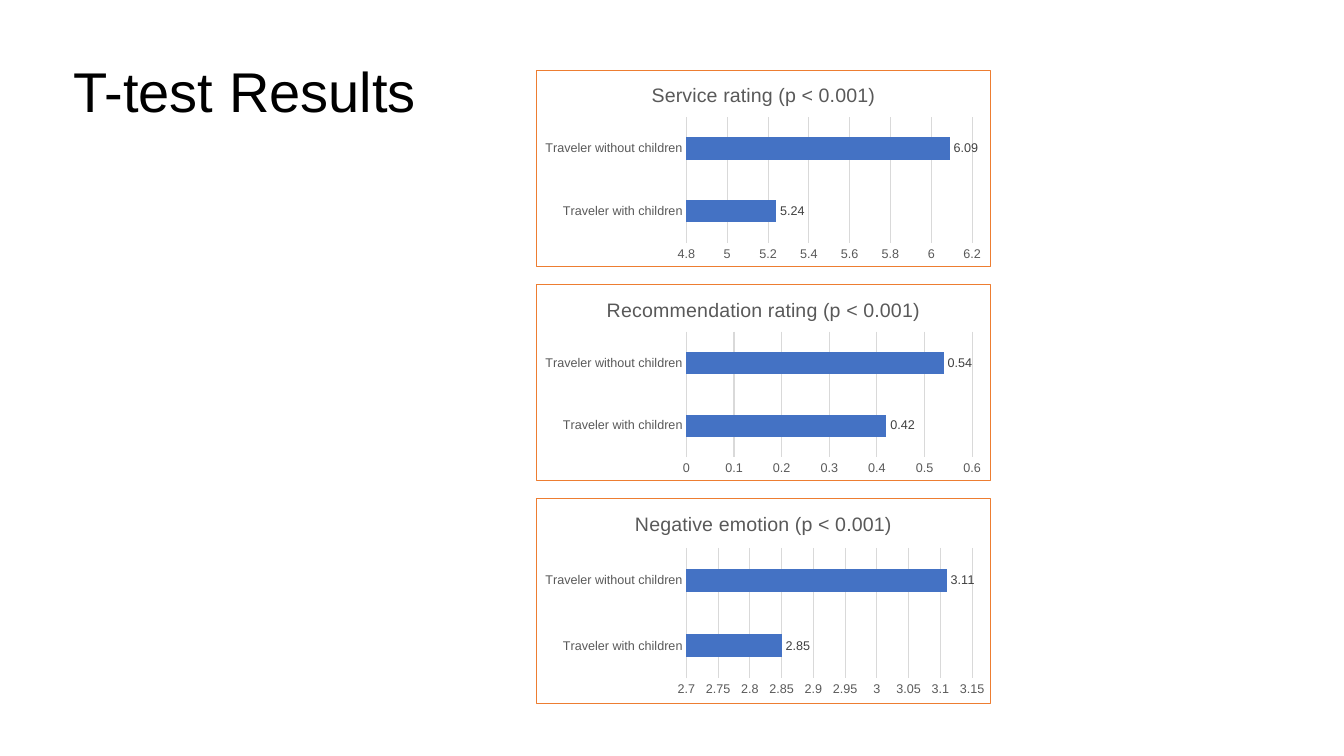
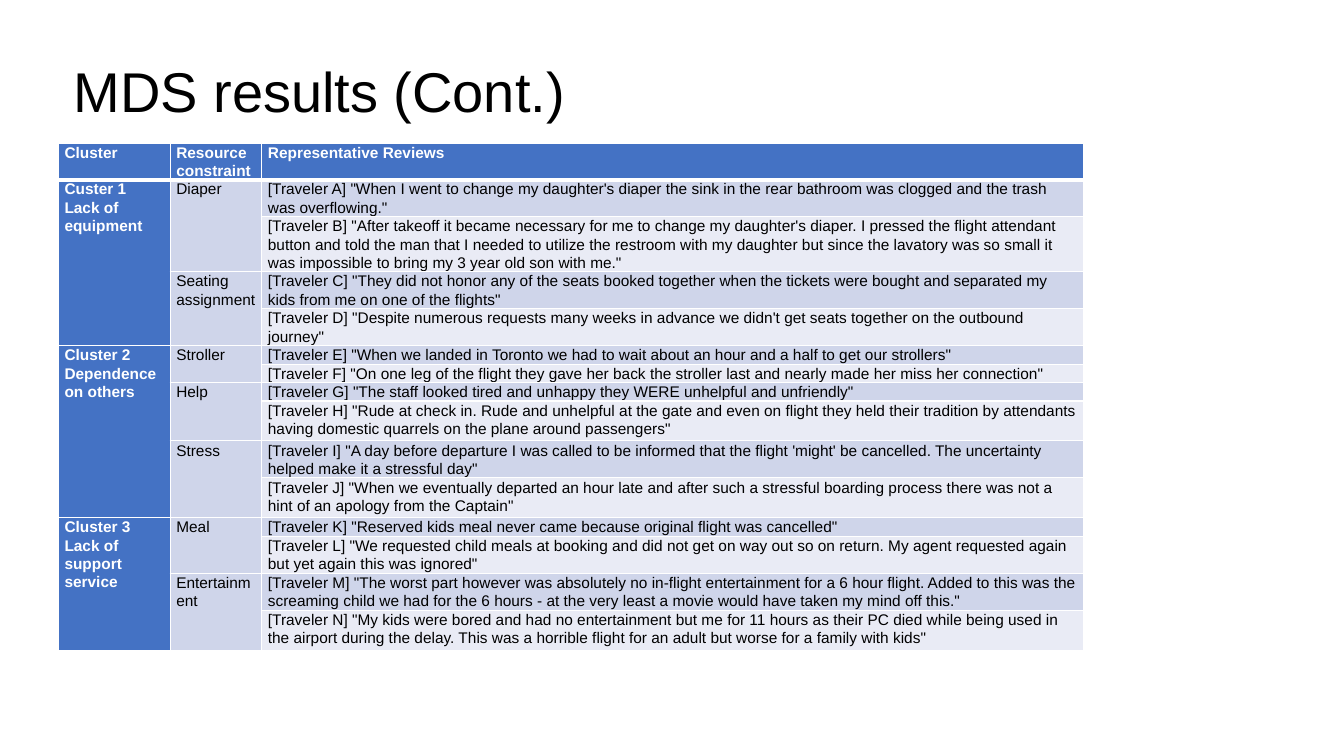
from itertools import accumulate

from lxml.etree import SubElement
from pptx import Presentation
from pptx.chart.data import CategoryChartData
from pptx.dml.color import RGBColor
from pptx.enum.chart import XL_CHART_TYPE as ChartType
from pptx.enum.chart import XL_LABEL_POSITION as LabelPosition
from pptx.enum.chart import XL_TICK_MARK as TickMark
from pptx.enum.text import MSO_ANCHOR as Anchor
from pptx.enum.text import MSO_AUTO_SIZE as AutoSize
from pptx.enum.text import PP_ALIGN as Align
from pptx.oxml import parse_xml
from pptx.oxml.ns import nsdecls, qn
from pptx.util import Emu, Inches, Pt

SLIDE_W, SLIDE_H = Inches(13.33), Inches(7.5)
FONT = "Arial"
BLACK, WHITE = "000000", "FFFFFF"
BLUE, ORANGE = "4472C4", "ED7D31"
BAND_DARK, BAND_LIGHT = "CFD5EA", "E9EBF5"
GRID_GREY, AXIS_GREY, LABEL_GREY = "D9D9D9", "595959", "404040"

# Boxes are left, top, width, height in percent of the slide.
TITLE_BOX = (4.73, 7.87, 75.38, 13.33)
CHART_COLUMN = (39.9, 9.2, 33.83, 83.87)
TABLE_BOX = (4.35, 18.93, 76.28, 66.8)

TRAVELERS = ("Traveler with children", "Traveler without children")
# Title, values, axis minimum, axis maximum, axis step, height weight
T_TESTS = [
    ("Service rating (p < 0.001)", (5.24, 6.09), 4.8, 6.2, 0.2, 1),
    ("Recommendation rating (p < 0.001)", (0.42, 0.54), 0, 0.6, 0.1, 1),
    ("Negative emotion (p < 0.001)", (2.85, 3.11), 2.7, 3.15, 0.05, 1.04),
]
CHART_GAP = 2.7 / 100
PLOT_LAYOUT = {"x": 0.33, "y": 0.24, "w": 0.63, "h": 0.64}

HEADINGS = ("Cluster", "Resource constraint", "Representative Reviews")
CLUSTERS = [
    ("Custer 1\nLack of equipment", [
        ("Diaper", [
            "[Traveler A] \"When I went to change my daughter's diaper the sink in the rear "
            "bathroom was clogged and the trash was overflowing.\"",
            "[Traveler B] \"After takeoff it became necessary for me to change my daughter's "
            "diaper. I pressed the flight attendant button and told the man that I needed to "
            "utilize the restroom with my daughter but since the lavatory was so small it was "
            "impossible to bring my 3 year old son with me.\"",
        ]),
        ("Seating assignment", [
            "[Traveler C] \"They did not honor any of the seats booked together when the "
            "tickets were bought and separated my kids from me on one of the flights\"",
            "[Traveler D] \"Despite numerous requests many weeks in advance we didn't get "
            "seats together on the outbound journey\"",
        ]),
    ]),
    ("Cluster 2\nDependence on others", [
        ("Stroller", [
            "[Traveler E] \"When we landed in Toronto we had to wait about an hour and a half "
            "to get our strollers\"",
            "[Traveler F] \"On one leg of the flight they gave her back the stroller last and "
            "nearly made her miss her connection\"",
        ]),
        ("Help", [
            "[Traveler G] \"The staff looked tired and unhappy they WERE unhelpful and "
            "unfriendly\"",
            "[Traveler H] \"Rude at check in. Rude and unhelpful at the gate and even on "
            "flight they held their tradition by attendants having domestic quarrels on the "
            "plane around passengers\"",
        ]),
        ("Stress", [
            "[Traveler I] \"A day before departure I was called to be informed that the "
            "flight 'might' be cancelled. The uncertainty helped make it a stressful day\"",
            "[Traveler J] \"When we eventually departed an hour late and after such a "
            "stressful boarding process there was not a hint of an apology from the Captain\"",
        ]),
    ]),
    ("Cluster 3\nLack of support service", [
        ("Meal", [
            "[Traveler K] \"Reserved kids meal never came because original flight was "
            "cancelled\"",
            "[Traveler L] \"We requested child meals at booking and did not get on way out so "
            "on return. My agent requested again but yet again this was ignored\"",
        ]),
        ("Entertainment", [
            "[Traveler M] \"The worst part however was absolutely no in-flight entertainment "
            "for a 6 hour flight. Added to this was the screaming child we had for the 6 hours "
            "- at the very least a movie would have taken my mind off this.\"",
            "[Traveler N] \"My kids were bored and had no entertainment but me for 11 hours as "
            "their PC died while being used in the airport during the delay. This was a "
            "horrible flight for an adult but worse for a family with kids\"",
        ]),
    ]),
]
COLUMN_WEIGHTS = (1.11, 0.91, 8.16)
ROW_WEIGHTS = (0.36, 0.37, 0.55, 0.37, 0.37, 0.18, 0.18, 0.18, 0.4,
               0.37, 0.4, 0.18, 0.37, 0.37, 0.4)


def rgb(hex_color):
    return RGBColor.from_string(hex_color)


def to_emu(box):
    left, top, width, height = box
    return [Emu(int(share * side / 100)) for share, side in
            ((left, SLIDE_W), (top, SLIDE_H), (width, SLIDE_W), (height, SLIDE_H))]


def split(length, weights):
    """Divide a length in proportion to the weights."""
    return [Emu(int(length * weight / sum(weights))) for weight in weights]


def style_font(font, size, color, bold=False):
    font.name, font.size, font.bold = FONT, Pt(size), bold
    font.color.rgb = rgb(color)


def add_titled_slide(prs, title_text):
    slide = prs.slides.add_slide(prs.slide_layouts[5])
    title = slide.shapes.title
    title.left, title.top, title.width, title.height = to_emu(TITLE_BOX)
    frame = title.text_frame
    frame.text = title_text
    frame.word_wrap = True
    frame.auto_size = AutoSize.NONE
    frame.vertical_anchor = Anchor.TOP
    paragraph = frame.paragraphs[0]
    paragraph.alignment, paragraph.line_spacing = Align.LEFT, 0.9
    style_font(paragraph.runs[0].font, 40, BLACK)
    return slide


def frame_chart(chart):
    """Give the chart area a white fill and a thin orange outline."""
    chart.element.find(qn("c:chart")).addnext(parse_xml(
        f'<c:spPr {nsdecls("c", "a")}>'
        f'<a:solidFill><a:srgbClr val="{WHITE}"/></a:solidFill>'
        f'<a:ln w="{Pt(0.75)}"><a:solidFill><a:srgbClr val="{ORANGE}"/></a:solidFill></a:ln>'
        '</c:spPr>'))


def place_plot(chart):
    """Fix the inner plot area as shares of the chart."""
    plot_area = chart.element.find(qn("c:chart")).find(qn("c:plotArea"))
    for automatic in plot_area.findall(qn("c:layout")):
        plot_area.remove(automatic)
    shares = "".join(f'<c:{key} val="{share}"/>' for key, share in PLOT_LAYOUT.items())
    plot_area.insert(0, parse_xml(
        f'<c:layout {nsdecls("c")}><c:manualLayout><c:layoutTarget val="inner"/>'
        f'<c:xMode val="edge"/><c:yMode val="edge"/>{shares}</c:manualLayout></c:layout>'))


def style_axes(chart, low, high, step):
    categories, values = chart.category_axis, chart.value_axis
    for axis in (categories, values):
        axis.major_tick_mark = axis.minor_tick_mark = TickMark.NONE
        style_font(axis.tick_labels.font, 9, AXIS_GREY)
    values.minimum_scale, values.maximum_scale, values.major_unit = low, high, step
    values.has_major_gridlines = True
    values.format.line.fill.background()
    for line in (categories.format.line, values.major_gridlines.format.line):
        line.color.rgb = rgb(GRID_GREY)
        line.width = Pt(0.75)


def add_t_test_chart(slide, box, title, ratings, low, high, step):
    data = CategoryChartData()
    data.categories = TRAVELERS
    data.add_series("Series 1", ratings)
    chart = slide.shapes.add_chart(ChartType.BAR_CLUSTERED, *box, data).chart
    chart.has_legend = False
    style_font(chart.font, 10, BLACK)
    chart.has_title = True
    chart.chart_title.include_in_layout = False
    heading = chart.chart_title.text_frame
    heading.text = title
    style_font(heading.paragraphs[0].runs[0].font, 14, AXIS_GREY)
    style_axes(chart, low, high, step)

    plot = chart.plots[0]
    plot.gap_width, plot.vary_by_categories = 182, False
    bars = plot.series[0].format.fill
    bars.solid()
    bars.fore_color.rgb = rgb(BLUE)
    plot.has_data_labels = True
    labels = plot.data_labels
    labels.show_value, labels.position = True, LabelPosition.OUTSIDE_END
    style_font(labels.font, 9, LABEL_GREY)
    place_plot(chart)
    frame_chart(chart)


def add_chart_column(slide, box):
    left, top, width, height = to_emu(box)
    gap = int(height * CHART_GAP)
    heights = split(height - 2 * gap, [test[-1] for test in T_TESTS])
    offsets = accumulate([chart_h + gap for chart_h in heights], initial=0)
    for (*content, _), chart_h, offset in zip(T_TESTS, heights, offsets):
        add_t_test_chart(slide, (left, top + offset, width, chart_h), *content)


def style_cell(cell, fill, top=1, bottom=1):
    """Fill a cell and rule it in white; top and bottom are line widths in points."""
    cell.margin_left = cell.margin_right = Inches(0.06)
    cell.margin_top = cell.margin_bottom = 0
    properties = cell._tc.get_or_add_tcPr()
    for side, width in (("L", 1), ("R", 1), ("T", top), ("B", bottom)):
        line = SubElement(properties, qn(f"a:ln{side}"), w=str(Pt(width)))
        SubElement(SubElement(line, qn("a:solidFill")), qn("a:srgbClr"), val=WHITE)
    cell.fill.solid()
    cell.fill.fore_color.rgb = rgb(fill)


def write_cell(cell, text, emphasis=False):
    cell.text_frame.text = text
    for paragraph in cell.text_frame.paragraphs:
        paragraph.line_spacing = 1.07
        for run in paragraph.runs:
            style_font(run.font, 11, WHITE if emphasis else BLACK, emphasis)


def add_review_table(slide, box):
    left, top, width, height = to_emu(box)
    table = slide.shapes.add_table(
        len(ROW_WEIGHTS), len(COLUMN_WEIGHTS), left, top, width, height).table
    for column, column_w in zip(table.columns, split(width, COLUMN_WEIGHTS)):
        column.width = column_w
    for row, row_h in zip(table.rows, split(height, ROW_WEIGHTS)):
        row.height = row_h

    for index, heading in enumerate(HEADINGS):
        style_cell(table.cell(0, index), BLUE, bottom=3)
        write_cell(table.cell(0, index), heading, emphasis=True)
    for row in range(1, len(ROW_WEIGHTS)):
        review_fill = BAND_DARK if row % 2 else BAND_LIGHT
        for index, fill in enumerate((BLUE, BAND_DARK, review_fill)):
            style_cell(table.cell(row, index), fill, top=3 if row == 1 else 1)

    row = 1
    for cluster, constraints in CLUSTERS:
        cluster_row = row
        for constraint, reviews in constraints:
            write_cell(table.cell(row, 1), constraint)
            table.cell(row, 1).merge(table.cell(row + len(reviews) - 1, 1))
            for review in reviews:
                write_cell(table.cell(row, 2), review)
                row += 1
        write_cell(table.cell(cluster_row, 0), cluster, emphasis=True)
        table.cell(cluster_row, 0).merge(table.cell(row - 1, 0))


def main():
    prs = Presentation()
    prs.slide_width, prs.slide_height = SLIDE_W, SLIDE_H
    add_chart_column(add_titled_slide(prs, "T-test Results"), CHART_COLUMN)
    add_review_table(add_titled_slide(prs, "MDS results (Cont.)"), TABLE_BOX)
    prs.save("out.pptx")


if __name__ == "__main__":
    main()
